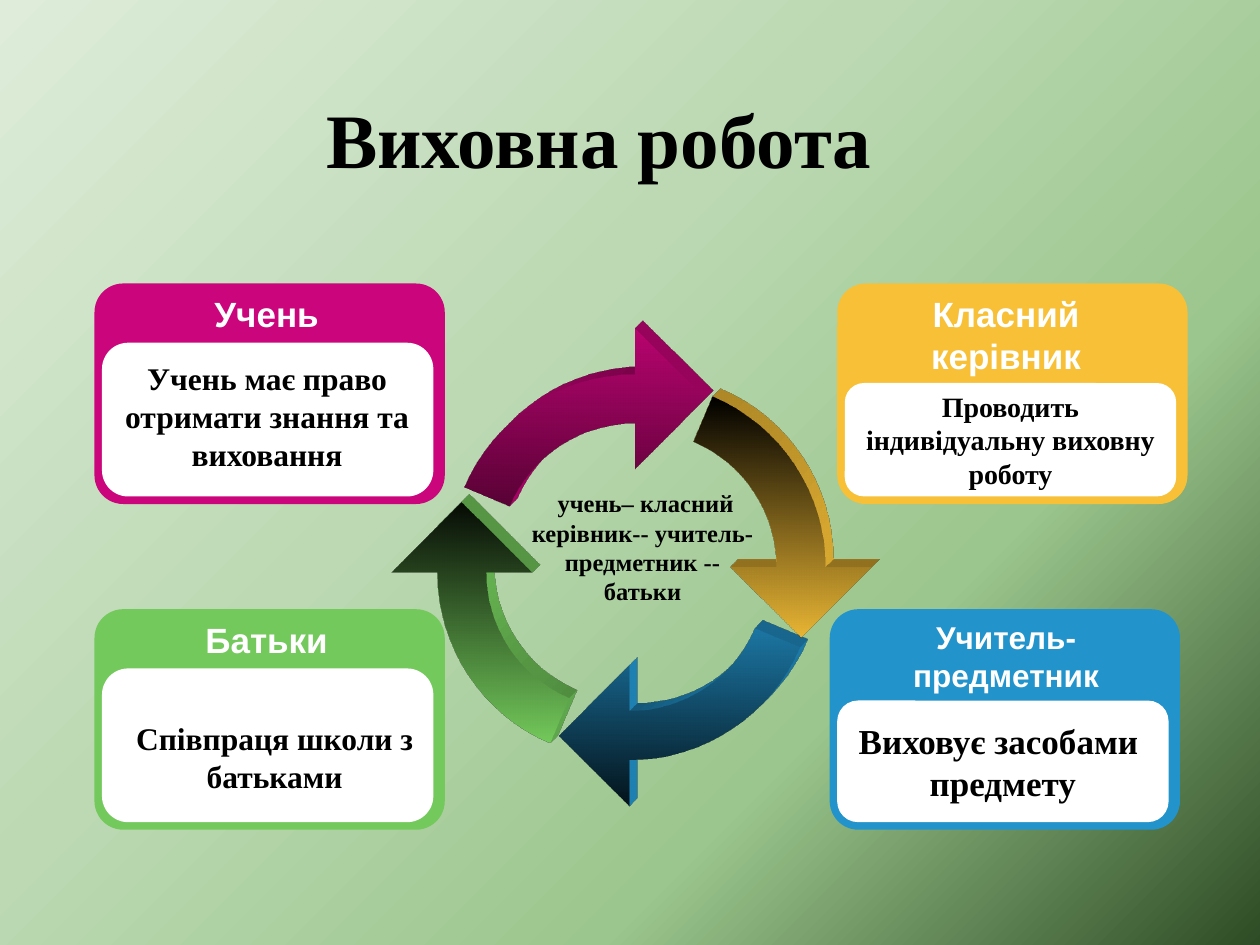
import copy
import math
from dataclasses import dataclass

import pptx
import pptx.dml.color
import pptx.enum.shapes
import pptx.enum.text
import pptx.oxml
import pptx.util

COLUMNS = 100
UNIT = pptx.util.Inches(10) // COLUMNS
TOP = pptx.enum.text.MSO_ANCHOR.TOP
MIDDLE = pptx.enum.text.MSO_ANCHOR.MIDDLE
LEFT = pptx.enum.text.PP_ALIGN.LEFT
CENTER = pptx.enum.text.PP_ALIGN.CENTER
NAMESPACE = "http://schemas.openxmlformats.org/drawingml/2006/main"


@dataclass(frozen=True)
class Theme:
    serif: str = "Times New Roman"
    sans: str = "Arial"
    black: str = "000000"
    white: str = "FFFFFF"
    pink: str = "CB057B"
    dark_pink: str = "3D0225"
    orange: str = "F7C037"
    blue: str = "2393CB"
    green: str = "73C95B"
    background: tuple = ((0, "DEECD9"), (0.4, "BCD9B3"), (0.7, "9BC68D"), (1, "2E4C25"))
    title: int = 44
    large: int = 20
    medium: int = 18
    small: int = 16
    tiny: int = 14


THEME = Theme()


@dataclass(frozen=True)
class Card:
    column: float
    row: float
    color: str
    heading: str
    heading_size: int
    body: str
    body_size: int
    panel_offset: float
    body_box: tuple


CARDS = (
    Card(7.5, 48.35, THEME.green, "Батьки ", THEME.large,
         "Співпраця школи з батьками", THEME.medium, 4.7, (9.15, 56.55, 25.3, 7.2)),
    Card(65.85, 48.35, THEME.blue, "Учитель-предметник", THEME.medium,
         "Виховує засобами \nпредмету", THEME.large, 7.25, None),
    Card(7.5, 22.5, THEME.pink, "Учень ", THEME.large,
         "Учень має право отримати знання та виховання", THEME.medium, 4.7,
         (8.55, 28, 25.3, 10.1)),
    Card(66.45, 22.5, THEME.orange, "Класний керівник", THEME.large,
         "Проводить індивідуальну виховну роботу", THEME.small, 7.9,
         (67.55, 30.4, 25.3, 9.1)),
)

ARROWS = (
    ((49.95, 45.65), 112.9, THEME.black, THEME.blue),
    ((49.35, 45.45), 202.9, THEME.black, THEME.green),
    ((50.35, 44.35), 292.9, THEME.dark_pink, THEME.pink),
    ((50.85, 44.95), 22.9, THEME.black, THEME.orange),
)
RING_WIDTH, RING_HEIGHT = 29.3, 28.9
INNER, OUTER, SWEEP = 10.75, 14.65, 67.1


def grid(*lengths):
    return [round(length * UNIT) for length in lengths]


def rgb(color):
    return pptx.dml.color.RGBColor.from_string(color)


def gradient(fill, stops):
    fill.gradient()
    fill.gradient_angle = 315
    stop_list = fill.gradient_stops[0]._gs.getparent()
    while len(stop_list) < len(stops):
        stop_list.append(copy.deepcopy(stop_list[-1]))
    for stop, (position, color) in zip(fill.gradient_stops, stops):
        stop.position = position
        stop.color.rgb = rgb(color)


def write(shape, text, size, face, color, alignment=CENTER, anchor=TOP, wrap=True):
    frame = shape.text_frame
    frame.word_wrap = wrap
    frame.vertical_anchor = anchor
    frame.text = text
    for paragraph in frame.paragraphs:
        paragraph.alignment = alignment
        paragraph.font.size = pptx.util.Pt(size)
        paragraph.font.name = face
        paragraph.font.bold = True
        paragraph.font.color.rgb = rgb(color)


def add_text(slide, box, text, size, face, color):
    write(slide.shapes.add_textbox(*grid(*box)), text, size, face, color)


def add_rounded(slide, box, color, rounding):
    shape = slide.shapes.add_shape(
        pptx.enum.shapes.MSO_SHAPE.ROUNDED_RECTANGLE, *grid(*box))
    shape.adjustments[0] = rounding
    shape.fill.solid()
    shape.fill.fore_color.rgb = rgb(color)
    shape.line.fill.background()
    shape.shadow.inherit = False
    return shape


def add_card(slide, card):
    add_rounded(slide, (card.column, card.row, 27.8, 17.5), card.color, 0.13)
    panel = add_rounded(
        slide, (card.column + 0.6, card.row + card.panel_offset, 26.3,
                16.9 - card.panel_offset), THEME.white, 0.17)
    heading_column = 12.5 if card.column < COLUMNS / 2 else 70.8
    add_text(slide, (heading_column, card.row + 0.25, 18.1, 4.3),
             card.heading, card.heading_size, THEME.sans, THEME.white)
    if card.body_box:
        add_text(slide, card.body_box, card.body, card.body_size, THEME.serif, THEME.black)
    else:
        write(panel, card.body, card.body_size, THEME.serif, THEME.black,
              anchor=MIDDLE, wrap=False)


def ring_point(radius, angle):
    turn = math.radians(angle)
    return (RING_WIDTH / 2 + radius * math.sin(turn),
            RING_HEIGHT / 2 - radius * math.cos(turn))


def segment(tag, *points):
    marks = "".join('<a:pt x="{}" y="{}"/>'.format(*grid(*point)) for point in points)
    return f"<a:{tag}>{marks}</a:{tag}>"


def arc(radius, start, end):
    handle = 4 / 3 * math.tan(math.radians(end - start) / 4)
    reach = radius * math.hypot(1, handle)
    lean = math.degrees(math.atan(handle))
    return segment("cubicBezTo", ring_point(reach, start + lean),
                   ring_point(reach, end - lean), ring_point(radius, end))


def arrow_path():
    width, height = grid(RING_WIDTH, RING_HEIGHT)
    head = ((18.3, SWEEP), (13.9, SWEEP + 23.7), (7.1, SWEEP))
    parts = [segment("moveTo", ring_point(INNER, SWEEP)),
             arc(INNER, SWEEP, 0),
             segment("lnTo", ring_point(OUTER, 0)),
             arc(OUTER, 0, SWEEP)]
    parts += [segment("lnTo", ring_point(*corner)) for corner in head]
    return pptx.oxml.parse_xml(
        f'<a:path xmlns:a="{NAMESPACE}" w="{width}" h="{height}">'
        + "".join(parts) + "<a:close/></a:path>")


def extrude(shape, color):
    scene = f"""<a:scene3d xmlns:a="{NAMESPACE}">
        <a:camera prst="legacyObliqueTopRight"/>
        <a:lightRig rig="legacyFlat3" dir="b"/></a:scene3d>"""
    solid = f"""<a:sp3d xmlns:a="{NAMESPACE}" extrusionH="163500" prstMaterial="legacyMatte">
        <a:extrusionClr><a:srgbClr val="{color}"/></a:extrusionClr></a:sp3d>"""
    for markup in (scene, solid):
        shape._element.spPr.append(pptx.oxml.parse_xml(markup))


def add_cycle_arrow(slide, center, turn, dark, color):
    left, top = center[0] - RING_WIDTH / 2, center[1] - RING_HEIGHT / 2
    builder = slide.shapes.build_freeform(*grid(left, top))
    builder.add_line_segments([grid(left + RING_WIDTH, top + RING_HEIGHT)])
    arrow = builder.convert_to_shape()
    outline = arrow._element.xpath(".//a:path")[0]
    outline.getparent().replace(outline, arrow_path())
    arrow.rotation = turn
    gradient(arrow.fill, ((0, dark), (1, color)))
    arrow.line.fill.background()
    arrow.shadow.inherit = False
    extrude(arrow, color)


def add_title(slide, text):
    title = slide.shapes.title
    title.left, title.top, title.width, title.height = grid(24.9, 6.8, 63.9, 8.4)
    write(title, text, THEME.title, THEME.serif, THEME.black, alignment=LEFT)


def main():
    presentation = pptx.Presentation()
    presentation.slide_width = COLUMNS * UNIT
    presentation.slide_height = 75 * UNIT
    slide = presentation.slides.add_slide(presentation.slide_layouts[5])
    gradient(slide.background.fill, THEME.background)
    add_title(slide, "Виховна робота")
    for card in CARDS:
        add_card(slide, card)
    for arrow in ARROWS:
        add_cycle_arrow(slide, *arrow)
    add_text(slide, (40.6, 38.25, 20.8, 10.8),
             " учень– класний керівник-- учитель- предметник -- батьки",
             THEME.tiny, THEME.serif, THEME.black)
    presentation.save("out.pptx")


if __name__ == "__main__":
    main()
